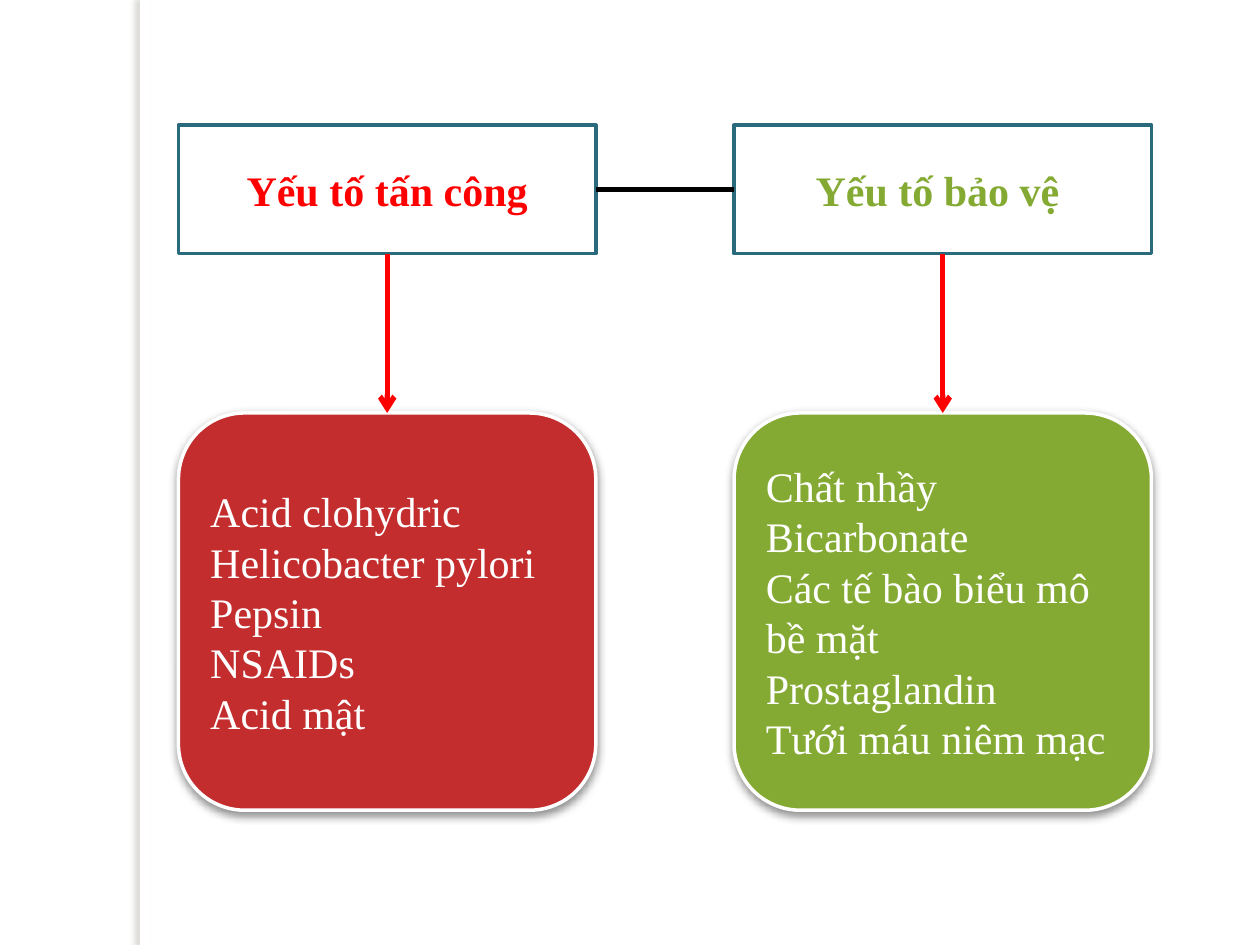
from dataclasses import dataclass

from lxml.etree import SubElement
from pptx import Presentation
from pptx.dml.color import RGBColor
from pptx.enum.shapes import MSO_CONNECTOR, MSO_SHAPE
from pptx.enum.text import MSO_ANCHOR, PP_ALIGN
from pptx.oxml.ns import qn
from pptx.util import Pt


@dataclass(frozen=True)
class Theme:
    white: str = "FFFFFF"
    black: str = "000000"
    red: str = "FF0000"
    crimson: str = "C32D2E"
    green: str = "84AA33"
    teal: str = "296B7C"
    edge_shade: str = "736F63"
    font: str = "Times New Roman"
    text_size: int = 24
    border: int = 2
    link: int = 3


class SlideBuilder:
    def __init__(self, slide, theme):
        self.slide = slide
        self.theme = theme

    def block(self, kind, left, top, width, height, fill, border=None):
        block = self.slide.shapes.add_shape(
            kind, Pt(left), Pt(top), Pt(width), Pt(height))
        block.shadow.inherit = False
        block.fill.solid()
        block.fill.fore_color.rgb = RGBColor.from_string(fill)
        if border:
            block.line.color.rgb = RGBColor.from_string(border)
            block.line.width = Pt(self.theme.border)
        else:
            block.line.fill.background()
        return block

    def cast_shadow(self, block, color, opacity, blur, distance, angle):
        effects = block._element.spPr.find(qn("a:effectLst"))
        shadow = SubElement(
            effects, qn("a:outerShdw"), blurRad=str(Pt(blur)),
            dist=str(Pt(distance)), dir=str(angle * 60000),
            algn="ctr", rotWithShape="0")
        tint = SubElement(shadow, qn("a:srgbClr"), val=color)
        SubElement(tint, qn("a:alpha"), val=str(opacity * 1000))

    def set_lines(self, block, lines, color, align, bold=False):
        frame = block.text_frame
        frame.word_wrap = True
        frame.vertical_anchor = MSO_ANCHOR.MIDDLE
        frame.text = "\n".join(lines)
        for paragraph in frame.paragraphs:
            paragraph.alignment = align
            for run in paragraph.runs:
                run.font.name = self.theme.font
                run.font.size = Pt(self.theme.text_size)
                run.font.bold = bold
                run.font.color.rgb = RGBColor.from_string(color)

    def page_edge(self, left, width, height):
        edge = self.block(MSO_SHAPE.RECTANGLE, left, 0, width, height,
                          self.theme.white)
        self.cast_shadow(edge, self.theme.edge_shade, 25, 3, 3, 180)

    def heading(self, left, top, width, height, title, color):
        heading = self.block(MSO_SHAPE.RECTANGLE, left, top, width, height,
                             self.theme.white, self.theme.teal)
        self.set_lines(heading, [title], color, PP_ALIGN.CENTER, bold=True)
        return heading

    def factor_card(self, left, top, width, height, factors, fill):
        card = self.block(MSO_SHAPE.ROUNDED_RECTANGLE, left, top, width,
                          height, fill, self.theme.white)
        self.cast_shadow(card, self.theme.black, 43, 5, 2, 90)
        self.set_lines(card, factors, self.theme.white, PP_ALIGN.LEFT)
        return card

    def link(self, start, start_side, end, end_side, color, arrow=False):
        link = self.slide.shapes.add_connector(
            MSO_CONNECTOR.STRAIGHT, 0, 0, 0, 0)
        link.begin_connect(start, start_side)
        link.end_connect(end, end_side)
        link.line.color.rgb = RGBColor.from_string(color)
        link.line.width = Pt(self.theme.link)
        if arrow:
            outline = link._element.spPr.find(qn("a:ln"))
            SubElement(outline, qn("a:tailEnd"), type="arrow")
        SubElement(link._element.spPr, qn("a:effectLst"))


def main():
    theme = Theme()
    deck = Presentation()
    deck.slide_width, deck.slide_height = Pt(720), Pt(540)
    slide = deck.slides.add_slide(deck.slide_layouts[6])
    builder = SlideBuilder(slide, theme)
    builder.page_edge(80, 6, 540)

    columns = [
        ("Yếu tố tấn công", theme.red, theme.crimson,
         ["Acid clohydric", "Helicobacter pylori", "Pepsin", "NSAIDs",
          "Acid mật"]),
        ("Yếu tố bảo vệ ", theme.green, theme.green,
         ["Chất nhầy", "Bicarbonate", "Các tế bào biểu mô bề mặt",
          "Prostaglandin", "Tưới máu niêm mạc"]),
    ]
    first_left, column_step, width = 102, 317.5, 238.5
    headings = []
    for index, (title, title_color, fill, factors) in enumerate(columns):
        left = first_left + index * column_step
        heading = builder.heading(left, 71.5, width, 73.5, title, title_color)
        card = builder.factor_card(left, 236, width, 227, factors, fill)
        builder.link(heading, 2, card, 0, theme.red, arrow=True)
        headings.append(heading)

    attack, defence = headings
    builder.link(defence, 1, attack, 3, theme.black)
    deck.save("out.pptx")


if __name__ == "__main__":
    main()
